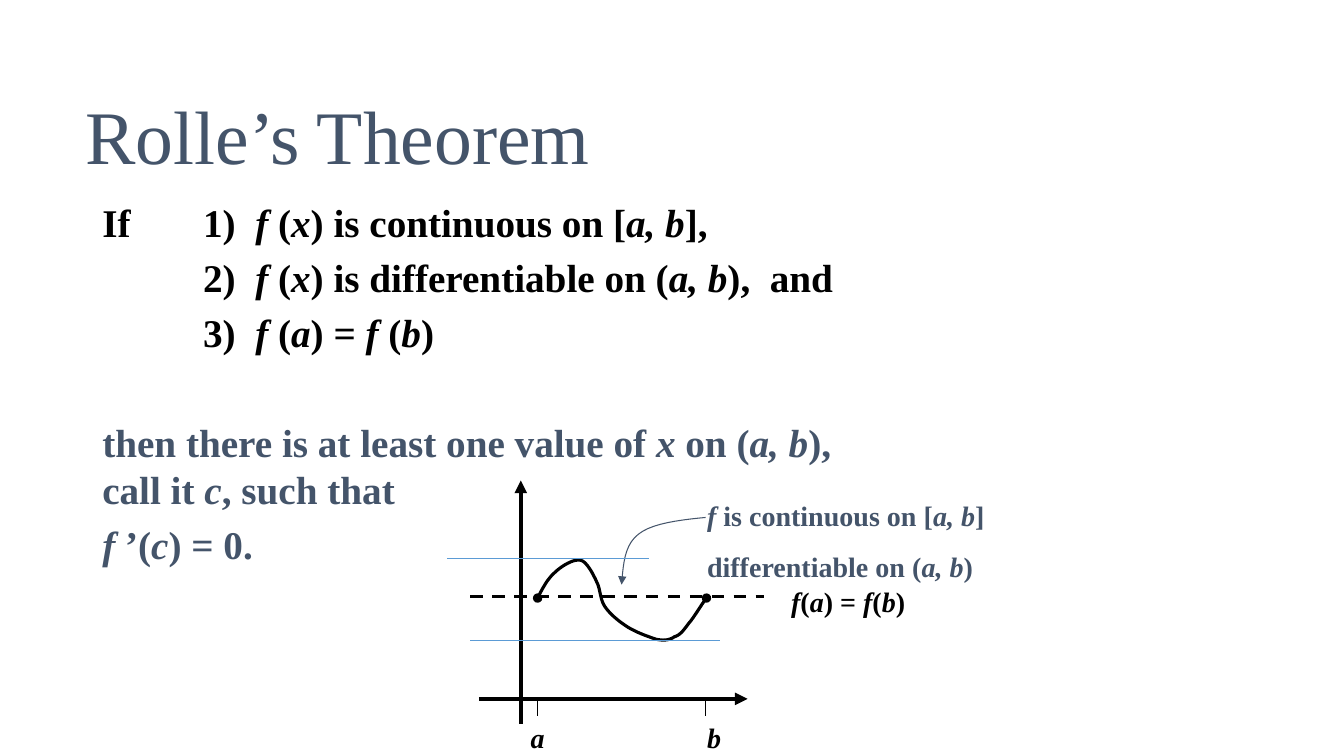
from dataclasses import dataclass

from lxml import etree
from pptx import Presentation
from pptx.dml.color import RGBColor
from pptx.enum.dml import MSO_LINE
from pptx.enum.shapes import MSO_CONNECTOR
from pptx.enum.text import MSO_ANCHOR
from pptx.oxml.ns import qn
from pptx.util import Inches, Pt

STRAIGHT = MSO_CONNECTOR.STRAIGHT
DASH = MSO_LINE.DASH
BOTTOM, TOP = MSO_ANCHOR.BOTTOM, MSO_ANCHOR.TOP

COLUMNS, ROWS = 160, 90
CELL = Inches(1 / 12)
TAB_CELLS = 12
CURVE_STEPS = 10


@dataclass(frozen=True)
class Theme:
    font: str = "Times New Roman"
    ink: RGBColor = RGBColor(0, 0, 0)
    slate: RGBColor = RGBColor(0x44, 0x54, 0x6A)
    tangent: RGBColor = RGBColor(0x5B, 0x9B, 0xD5)
    title: int = 54
    body: int = 28
    label: int = 20
    gap: float = 5.6
    section_gap: float = 45


@dataclass(frozen=True)
class Box:
    left: float
    top: float
    width: float
    height: float

    def inner(self, left, top, width, height):
        return Box(self.left + left, self.top + top, width, height)

    def point(self, column, row):
        return round((self.left + column) * CELL), round((self.top + row) * CELL)


THEME = Theme()

CONDITIONS = [
    "If\t1)  *f *(*x*) is continuous on [*a, b*],",
    "\t2)  *f *(*x*) is differentiable on (*a, b*),  and",
    "\t3)  *f *(*a*) = *f *(*b*)",
]
CONCLUSION = [
    "then there is at least one value of *x *on (*a, b*), call it *c*, such that",
    "*f* ’(*c*) = 0.",
]
CURVE = [
    (12, 14), (12.6, 12.8), (13.2, 11.7), (14, 11),
    (14.8, 10.2), (16.3, 9.3), (17.1, 9.5),
    (17.8, 9.6), (18.6, 11.1), (19, 12),
    (19.5, 12.9), (19.4, 14.1), (20, 15),
    (20.6, 15.9), (21.6, 16.7), (22.5, 17.3),
    (23.5, 18), (25.2, 18.6), (26.1, 18.9),
    (27.1, 19.1), (27.7, 19), (28.3, 18.6),
    (29, 18.4), (29.4, 17.8), (30, 17),
    (30.7, 16.2), (31.6, 14.6), (32.1, 14),
]
POINTER = [
    (32, 4.4), (28.9, 4.7), (25.6, 5.1), (24, 6.4),
    (22.3, 7.7), (22.2, 10.1), (22, 12.4),
]


def add_tab_stop(para, cells):
    stops = etree.SubElement(para._p.get_or_add_pPr(), qn("a:tabLst"))
    etree.SubElement(stops, qn("a:tab"), pos=str(cells * CELL), algn="l")


def add_text(page, box, lines, size, bold=True, anchor=TOP, wrap=True):
    text_box = page.shapes.add_textbox(
        *box.point(0, 0), round(box.width * CELL), round(box.height * CELL))
    frame = text_box.text_frame
    frame.word_wrap = wrap
    frame.vertical_anchor = anchor
    for index, (text, color, space) in enumerate(lines):
        para = frame.add_paragraph() if index else frame.paragraphs[0]
        if "\t" in text:
            add_tab_stop(para, TAB_CELLS)
        para.space_before = Pt(space)
        para.font.name = THEME.font
        para.font.size = Pt(size)
        para.font.bold = bold
        para.font.color.rgb = color
        for part, piece in enumerate(text.split("*")):
            if piece:
                span = para.add_run()
                span.text = piece
                if part % 2:
                    span.font.italic = True


def style_line(shape, color, width, head=None, tail=None):
    shape.line.color.rgb = color
    shape.line.width = Pt(width)
    outline = shape.line._get_or_add_ln()
    for tag, kind in (("a:headEnd", head), ("a:tailEnd", tail)):
        if kind:
            etree.SubElement(outline, qn(tag), type=kind)


def add_line(page, box, start, end, color, width, head=None, tail=None):
    line = page.shapes.add_connector(STRAIGHT, *box.point(*start), *box.point(*end))
    etree.SubElement(line._element.spPr, qn("a:effectLst"))
    style_line(line, color, width, head, tail)
    return line


def bezier(points):
    for first in range(0, len(points) - 1, 3):
        p, q, r, s = points[first:first + 4]
        for step in range(1, CURVE_STEPS + 1):
            t = step / CURVE_STEPS
            u = 1 - t
            yield tuple(u**3 * a + 3 * u * u * t * b + 3 * u * t * t * c + t**3 * d
                        for a, b, c, d in zip(p, q, r, s))


def add_curve(page, box, points, color, width, head=None, tail=None):
    builder = page.shapes.build_freeform(*box.point(*points[0]))
    builder.add_line_segments([box.point(*point) for point in bezier(points)], close=False)
    curve = builder.convert_to_shape()
    curve.shadow.inherit = False
    curve.fill.background()
    style_line(curve, color, width, head, tail)


def add_title(page, box):
    add_text(page, box, [("Rolle’s Theorem", THEME.slate, 0)],
             THEME.title, bold=False, anchor=BOTTOM)


def add_theorem(page, box):
    lines = [(text, THEME.ink, THEME.gap) for text in CONDITIONS]
    lines += [(text, THEME.slate, space)
              for text, space in zip(CONCLUSION, (THEME.section_gap, THEME.gap))]
    add_text(page, box, lines, THEME.body)


def add_graph(page, box):
    ink, slate = THEME.ink, THEME.slate
    axis_row, chord_row = 26, 13.8
    add_line(page, box, (10, 0), (10, 29), ink, 3, head="triangle")
    add_line(page, box, (5, axis_row), (37, axis_row), ink, 3, tail="triangle")
    add_curve(page, box, CURVE, ink, 2.25, "oval", "oval")
    for column in (12, 32):
        add_line(page, box, (column, axis_row), (column, axis_row + 2), ink, 0.75)
    add_curve(page, box, POINTER, slate, 0.75, tail="triangle")
    chord = add_line(page, box, (4, chord_row), (39, chord_row), ink, 2.25)
    chord.line.dash_style = DASH
    for start, end, row in ((1.25, 25.25, 9.3), (4, 33.7, 19.05)):
        add_line(page, box, (start, row), (end, row), THEME.tangent, 0.5)
    for text, color, left, top, width, wrap in (
        ("*a*", ink, 10, 28, 6, True),
        ("*b*", ink, 31, 28, 6, True),
        ("*f* is continuous on [*a, b*]", slate, 31, 1.6, 40, True),
        ("differentiable on (*a, b*)", slate, 31, 7.6, 36, True),
        ("*f*(*a*) = *f*(*b*)", ink, 41, 11.8, 17.4, False),
    ):
        add_text(page, box.inner(left, top, width, 5.2), [(text, color, 0)],
                 THEME.label, wrap=wrap)


def main():
    deck = Presentation()
    deck.slide_width, deck.slide_height = COLUMNS * CELL, ROWS * CELL
    page = deck.slides.add_slide(deck.slide_layouts[6])
    add_title(page, Box(9, 6, 102, 16))
    add_theorem(page, Box(11, 23, 93, 48))
    add_graph(page, Box(52, 57.2, 71, 33.2))
    deck.save("out.pptx")


if __name__ == "__main__":
    main()
